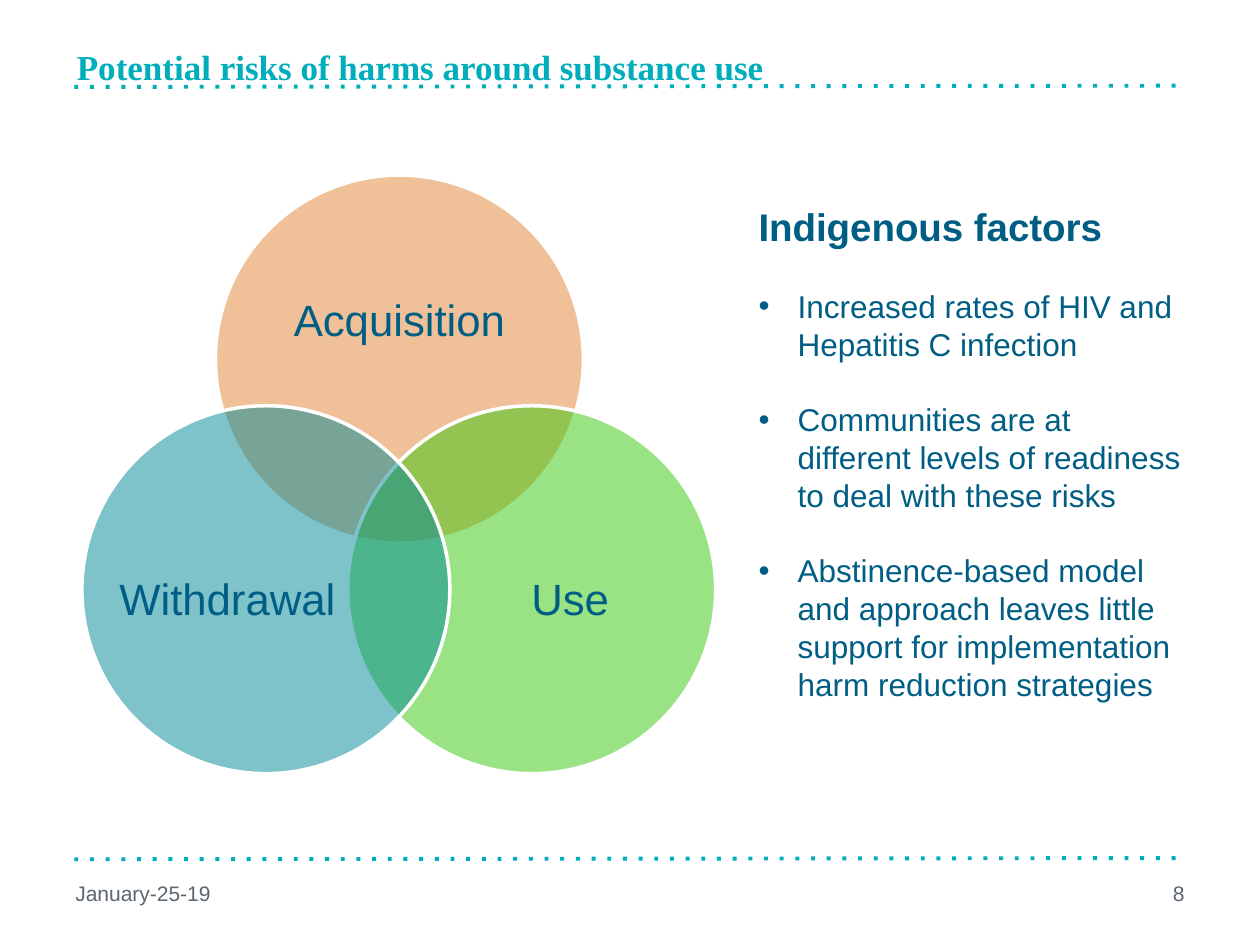
from typing import Any, NamedTuple

from lxml import etree
from pptx import Presentation, util as u
from pptx.dml import color as col
from pptx.enum import shapes as sh, text as tx
from pptx.oxml import ns

TEAL, NAVY, GREY, WHITE = "00ADBB", "005E85", "5C6670", "FFFFFF"
SIZE = 2.92
GAP = u.Pt(21.6)


class Box(NamedTuple):
    left: float
    top: float
    width: float
    height: float


class Ring(NamedTuple):
    name: str
    left: float
    top: float
    tint: str
    label: Box


class Note(NamedTuple):
    words: str
    area: Box
    align: Any


RINGS = [
    Ring("Acquisition", 1.71, 1.39, "E28432", Box(2.1, 1.9, 2.14, 1.31)),
    Ring("Use", 2.76, 3.22, "37C80D", Box(3.65, 3.97, 1.75, 1.61)),
    Ring("Withdrawal", 0.65, 3.22, "008996", Box(0.93, 3.97, 1.75, 1.61)),
]
NOTES = [
    Note("January-25-19", Box(0.5, 6.89, 2.33, 0.4), tx.PP_ALIGN.LEFT),
    Note("8", Box(7.17, 6.89, 2.33, 0.4), tx.PP_ALIGN.RIGHT),
]
RISKS = [
    "Increased rates of HIV and Hepatitis C infection",
    "Communities are at different levels of readiness to deal with these risks",
    "Abstinence-based model and approach leaves little support for "
    "implementation harm reduction strategies",
]


def apply(item: Any, form: dict[str, Any]) -> None:
    for key, value in form.items():
        setattr(item, key, value)


def paint(item: Any, tint: str) -> None:
    item.rgb = col.RGBColor.from_string(tint)


def add(node: Any, tag: str, **attrs: str) -> Any:
    return etree.SubElement(node, ns.qn(tag), attrs)


def place(shape: Any, box: Box) -> None:
    apply(shape, {key: u.Inches(value) for key, value in box._asdict().items()})


def write(para: Any, words: str, size: float, tint: str,
          face: str = "Arial", bold: bool = False, **form: Any) -> None:
    run = para.add_run()
    run.text = words
    apply(run.font, {"name": face, "size": u.Pt(size), "bold": bold})
    paint(run.font.color, tint)
    apply(para, form)


def draw_text(slide: Any, words: str, box: Box, size: float, tint: str,
              inset: bool, **form: Any) -> None:
    frame = slide.shapes.add_textbox(*map(u.Inches, box)).text_frame
    apply(frame, {"word_wrap": True, "vertical_anchor": tx.MSO_ANCHOR.MIDDLE})
    if not inset:
        sides = ("left", "top", "right", "bottom")
        apply(frame, {f"margin_{side}": 0 for side in sides})
    write(frame.paragraphs[0], words, size, tint, **form)


def draw_rule(slide: Any, top: float) -> None:
    ends = map(u.Inches, (0.59, top, 9.41, top - 0.01))
    rule = slide.shapes.add_connector(sh.MSO_CONNECTOR.STRAIGHT, *ends)
    rule.line.width = u.Pt(2.25)
    paint(rule.line.color, TEAL)
    add(rule.line._get_or_add_ln(), "a:prstDash", val="dot")
    add(rule._element.spPr, "a:effectLst")


def draw_ring(slide: Any, ring: Ring) -> None:
    area = map(u.Inches, (ring.left, ring.top, SIZE, SIZE))
    disc = slide.shapes.add_shape(sh.MSO_SHAPE.OVAL, *area)
    disc.shadow.inherit = False
    disc.fill.solid()
    paint(disc.fill.fore_color, ring.tint)
    tint = disc._element.spPr.find(ns.qn("a:solidFill"))[0]
    add(tint, "a:alpha", val="50000")
    disc.line.width = u.Pt(2)
    paint(disc.line.color, WHITE)
    draw_text(slide, ring.name, ring.label, 25, NAVY, False,
              alignment=tx.PP_ALIGN.CENTER, line_spacing=0.9)


def draw_title(shape: Any) -> None:
    place(shape, Box(0.51, 0.31, 7.56, 0.33))
    frame = shape.text_frame
    apply(frame, {"auto_size": tx.MSO_AUTO_SIZE.NONE, "word_wrap": True,
                  "vertical_anchor": tx.MSO_ANCHOR.TOP})
    write(frame.paragraphs[0], "Potential risks of harms around substance use",
          20, TEAL, "Times New Roman", True, alignment=tx.PP_ALIGN.LEFT)


def draw_list(shape: Any) -> None:
    place(shape, Box(5.92, 1.56, 3.58, 4.41))
    frame = shape.text_frame
    apply(frame, {"auto_size": tx.MSO_AUTO_SIZE.NONE, "word_wrap": True})
    head = frame.paragraphs[0]
    write(head, "Indigenous factors", 22, NAVY, bold=True, space_before=0)
    props = head._p.get_or_add_pPr()
    apply_marks(props, 0)
    add(props, "a:buNone")
    for risk in RISKS:
        para = frame.add_paragraph()
        write(para, risk, 18, NAVY, space_before=GAP, line_spacing=GAP)
        props = para._p.get_or_add_pPr()
        apply_marks(props, 0.31)
        add(props, "a:buChar", char="•")


def apply_marks(props: Any, depth: float) -> None:
    props.set("marL", str(u.Inches(depth)))
    props.set("indent", str(-u.Inches(depth)))


def main() -> None:
    deck = Presentation()
    apply(deck, {"slide_width": u.Inches(10), "slide_height": u.Inches(7.5)})
    slide = deck.slides.add_slide(deck.slide_layouts[1])
    for top in (0.69, 6.82):
        draw_rule(slide, top)
    draw_title(slide.shapes.title)
    for ring in RINGS:
        draw_ring(slide, ring)
    draw_list(slide.placeholders[1])
    for note in NOTES:
        draw_text(slide, note.words, note.area, 12, GREY, True,
                  alignment=note.align)
    deck.save("out.pptx")


if __name__ == "__main__":
    main()
